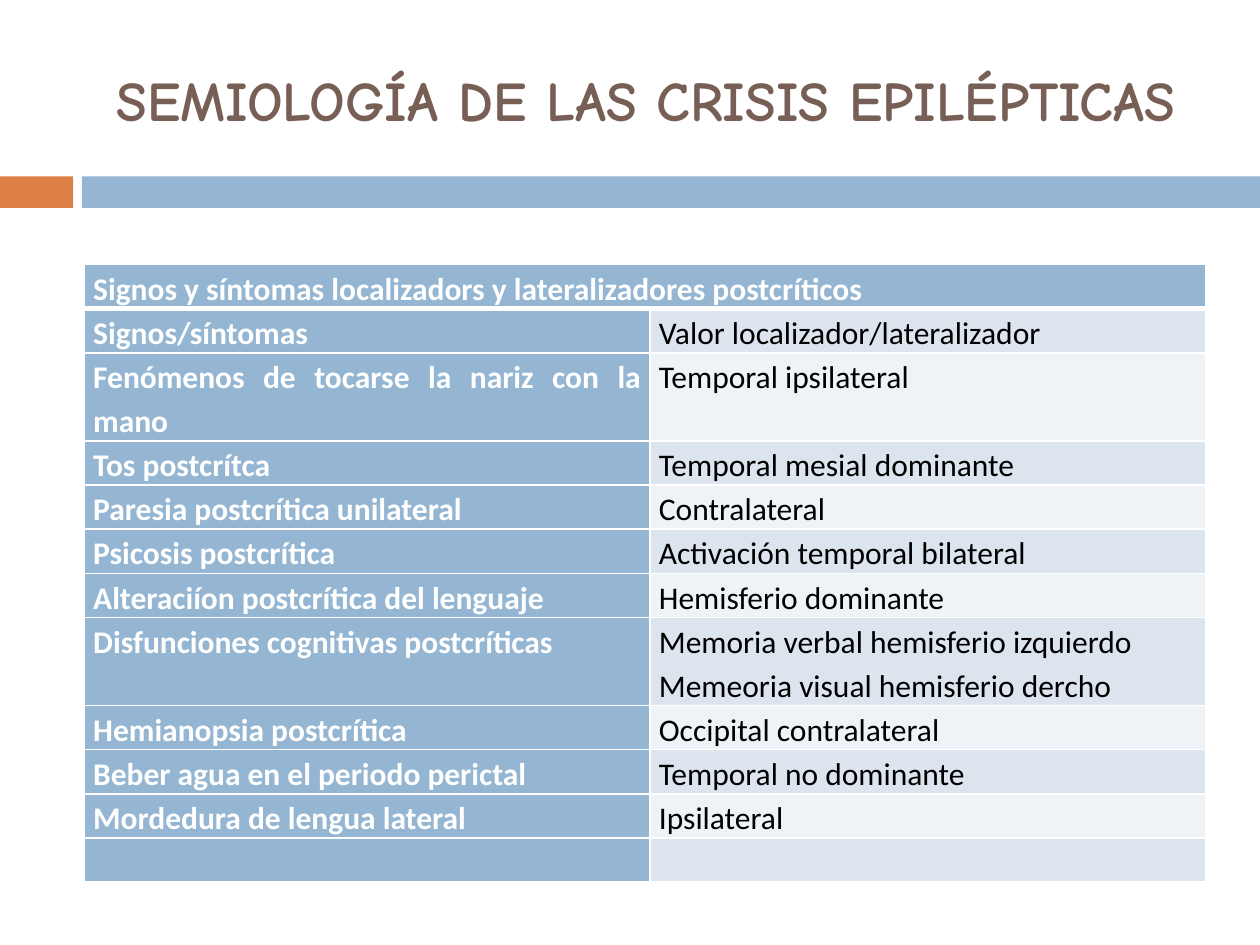
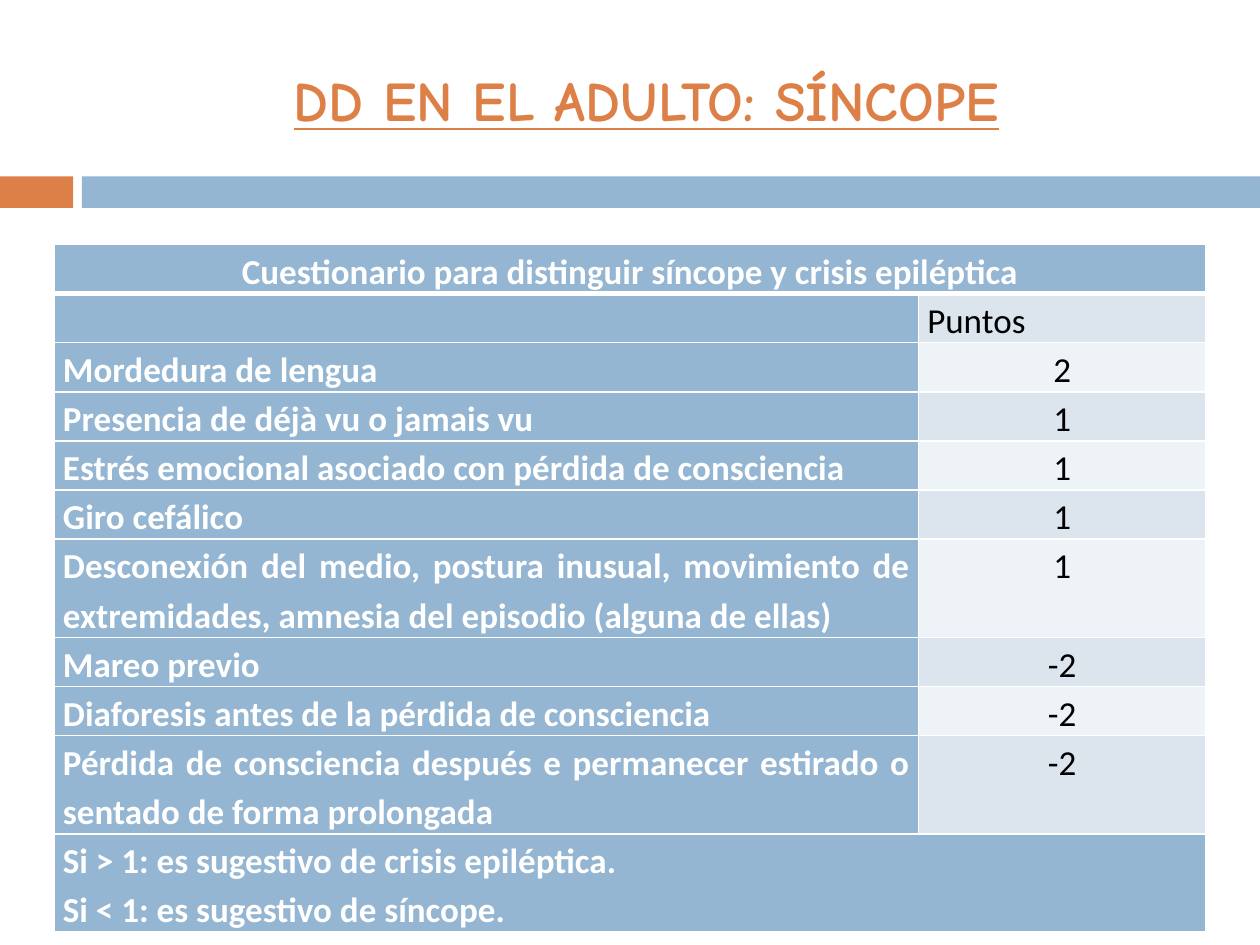
from lxml.etree import SubElement
from pptx import Presentation
from pptx.dml.color import RGBColor
from pptx.enum.shapes import MSO_SHAPE as Preset
from pptx.enum.text import MSO_ANCHOR as Anchor, PP_ALIGN as Align
from pptx.oxml.ns import qn
from pptx.util import Inches, Pt

WHITE = RGBColor(0xFF, 0xFF, 0xFF)
BLACK = RGBColor(0x00, 0x00, 0x00)
BROWN = RGBColor(0x77, 0x5F, 0x55)
ORANGE = RGBColor(0xDD, 0x80, 0x47)
BLUE = RGBColor(0x94, 0xB6, 0xD2)
BAND_DARK = RGBColor(0xDC, 0xE5, 0xEE)
BAND_LIGHT = RGBColor(0xEE, 0xF3, 0xF7)

TITLE_FONT, TABLE_FONT = "Comic Neue", "Calibri"
WIDTH, HEIGHT = Inches(10), Inches(7.5)
COLUMNS, ROWS = 100, 75

SIGNS = [
    ("Signos y síntomas localizadors y lateralizadores postcríticos",),
    ("Signos/síntomas", "Valor localizador/lateralizador"),
    ("Fenómenos de tocarse la nariz con la mano", "Temporal ipsilateral"),
    ("Tos postcrítca", "Temporal mesial dominante"),
    ("Paresia postcrítica unilateral", "Contralateral"),
    ("Psicosis postcrítica", "Activación temporal bilateral"),
    ("Alteraciíon postcrítica del lenguaje", "Hemisferio dominante"),
    ("Disfunciones cognitivas postcríticas",
     "Memoria verbal hemisferio izquierdo\nMemeoria visual hemisferio dercho"),
    ("Hemianopsia postcrítica", "Occipital contralateral"),
    ("Beber agua en el periodo perictal", "Temporal no dominante"),
    ("Mordedura de lengua lateral", "Ipsilateral"),
    ("", ""),
]
QUESTIONS = [
    ("Cuestionario para distinguir síncope y crisis epiléptica",),
    ("", "Puntos"),
    ("Mordedura de lengua", "2"),
    ("Presencia de déjà vu o jamais vu", "1"),
    ("Estrés emocional asociado con pérdida de consciencia", "1"),
    ("Giro cefálico", "1"),
    ("Desconexión del medio, postura inusual, movimiento de extremidades, "
     "amnesia del episodio (alguna de ellas)", "1"),
    ("Mareo previo", "-2"),
    ("Diaforesis antes de la pérdida de consciencia", "-2"),
    ("Pérdida de consciencia después e permanecer estirado o sentado "
     "de forma prolongada", "-2"),
    ("Si > 1: es sugestivo de crisis epiléptica.\n"
     "Si < 1: es sugestivo de síncope.",),
]


def across(columns):
    return round(WIDTH * columns / COLUMNS)


def down(rows):
    return round(HEIGHT * rows / ROWS)


def box(left, top, width, height):
    return across(left), down(top), across(width), down(height)


class Deck:
    """Holds the presentation, its style and the current slide."""

    def __init__(self):
        self.presentation = Presentation()
        self.presentation.slide_width = WIDTH
        self.presentation.slide_height = HEIGHT
        self.slide = None

    def add_slide(self, title, color, underline=False):
        layout = self.presentation.slide_layouts[6]
        self.slide = self.presentation.slides.add_slide(layout)
        self.band(0, 5.8, ORANGE)
        self.band(6.5, 93.5, BLUE)
        self.title(title, color, underline)

    def band(self, left, width, color):
        shape = self.slide.shapes.add_shape(
            Preset.RECTANGLE, *box(left, 14, width, 2.5))
        shape.shadow.inherit = False
        shape.fill.solid()
        shape.fill.fore_color.rgb = color
        shape.line.fill.background()

    def title(self, text, color, underline):
        shape = self.slide.shapes.add_textbox(*box(6.7, 2.5, 89.2, 10.8))
        text_frame = shape.text_frame
        text_frame.word_wrap = True
        text_frame.vertical_anchor = Anchor.MIDDLE
        text_frame.text = text
        self.format_text(text_frame, Align.CENTER, TITLE_FONT, 32, color, True)
        if underline:
            text_frame.paragraphs[0].runs[0].font.underline = True

    def format_text(self, text_frame, align, name, size, color, bold):
        for paragraph in text_frame.paragraphs:
            paragraph.alignment = align
            for run in paragraph.runs:
                run.font.name = name
                run.font.size = Pt(size)
                run.font.color.rgb = color
                run.font.bold = bold

    def table(self, content, left, top, widths, line_height, size,
              two_line_rows, header_align, value_align):
        """Draw a two-column table; one-item rows span both columns."""
        heights = [line_height * (2 if index in two_line_rows else 1)
                   for index in range(len(content))]
        frame = self.slide.shapes.add_table(
            len(content), len(widths),
            *box(left, top, sum(widths), sum(heights)))
        table = frame.table
        table.first_row = table.horz_banding = False
        for column, width in zip(table.columns, widths):
            column.width = across(width)
        for index, (texts, height) in enumerate(zip(content, heights)):
            table.rows[index].height = down(height)
            spans = len(texts) == 1
            band = BAND_DARK if index % 2 else BAND_LIGHT
            for side in range(len(widths)):
                cell = table.cell(index, side)
                labelled = spans or side == 0
                self.cell_style(cell, BLUE if labelled else band, index)
                if side >= len(texts):
                    continue
                align = Align.JUSTIFY
                if index == 0:
                    align = header_align
                elif side == 1 and index > 1:
                    align = value_align
                cell.text_frame.text = texts[side]
                self.format_text(cell.text_frame, align, TABLE_FONT, size,
                                 WHITE if labelled else BLACK, labelled)
                for paragraph in cell.text_frame.paragraphs:
                    paragraph.line_spacing = 1.15
            if spans:
                table.cell(index, 0).merge(table.cell(index, 1))

    def cell_style(self, cell, color, row):
        cell.margin_left = cell.margin_right = Inches(0.07)
        cell.margin_top = cell.margin_bottom = 0
        # Borders: the line under the header row is thicker
        properties = cell._tc.get_or_add_tcPr()
        weights = {"a:lnL": 1, "a:lnR": 1,
                   "a:lnT": 3 if row == 1 else 1,
                   "a:lnB": 3 if row == 0 else 1}
        for tag, weight in weights.items():
            line = SubElement(properties, qn(tag), w=str(Pt(weight)))
            fill = SubElement(line, qn("a:solidFill"))
            SubElement(fill, qn("a:srgbClr"), val=str(WHITE))
        cell.fill.solid()
        cell.fill.fore_color.rgb = color


def main():
    deck = Deck()

    # Signs after the seizure
    deck.add_slide("SEMIOLOGÍA DE LAS CRISIS EPILÉPTICAS", BROWN)
    deck.table(SIGNS, 6.7, 21, (44.9, 44.1), 3.5, 18, two_line_rows=(2, 7),
               header_align=Align.JUSTIFY, value_align=Align.JUSTIFY)

    # Syncope questionnaire
    deck.add_slide("DD EN EL ADULTO: SÍNCOPE", ORANGE, underline=True)
    deck.table(QUESTIONS, 4.3, 19.4, (68.6, 22.8), 3.9, 20,
               two_line_rows=(6, 9, 10),
               header_align=Align.CENTER, value_align=Align.CENTER)

    deck.presentation.save("out.pptx")


if __name__ == "__main__":
    main()
